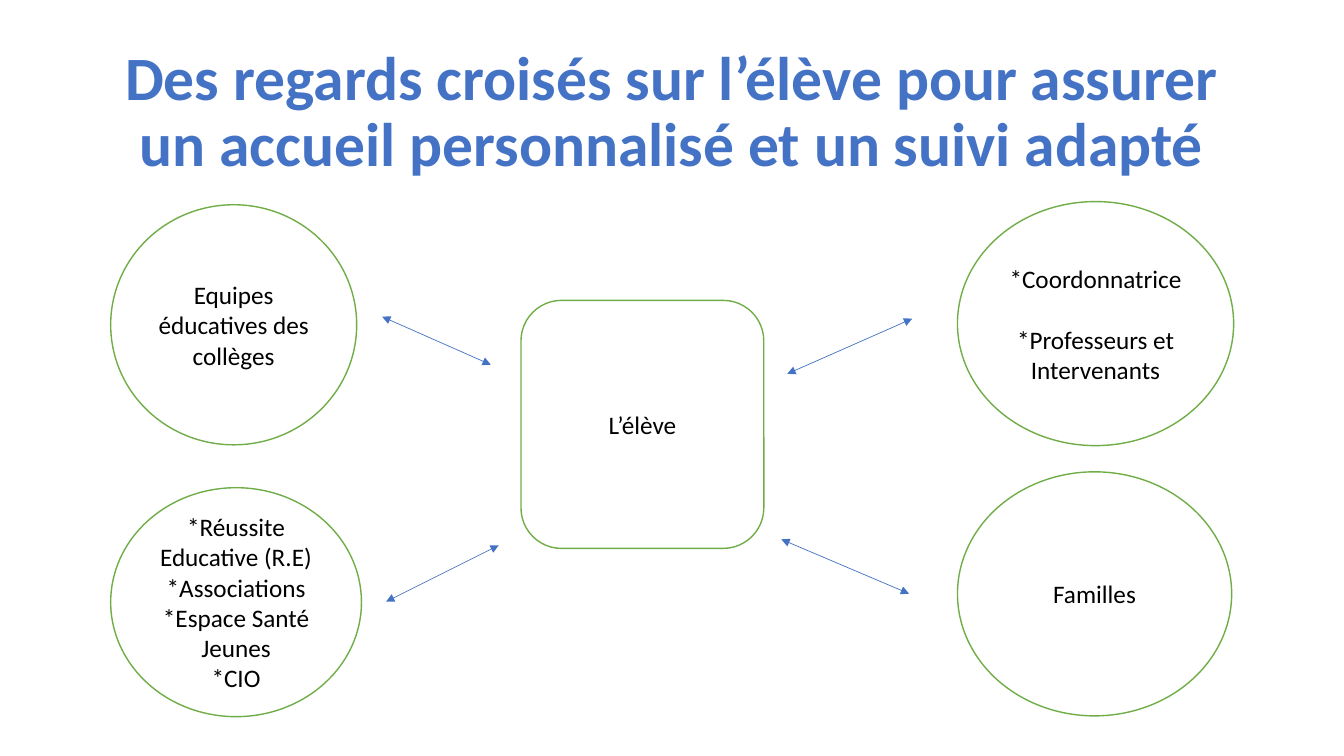
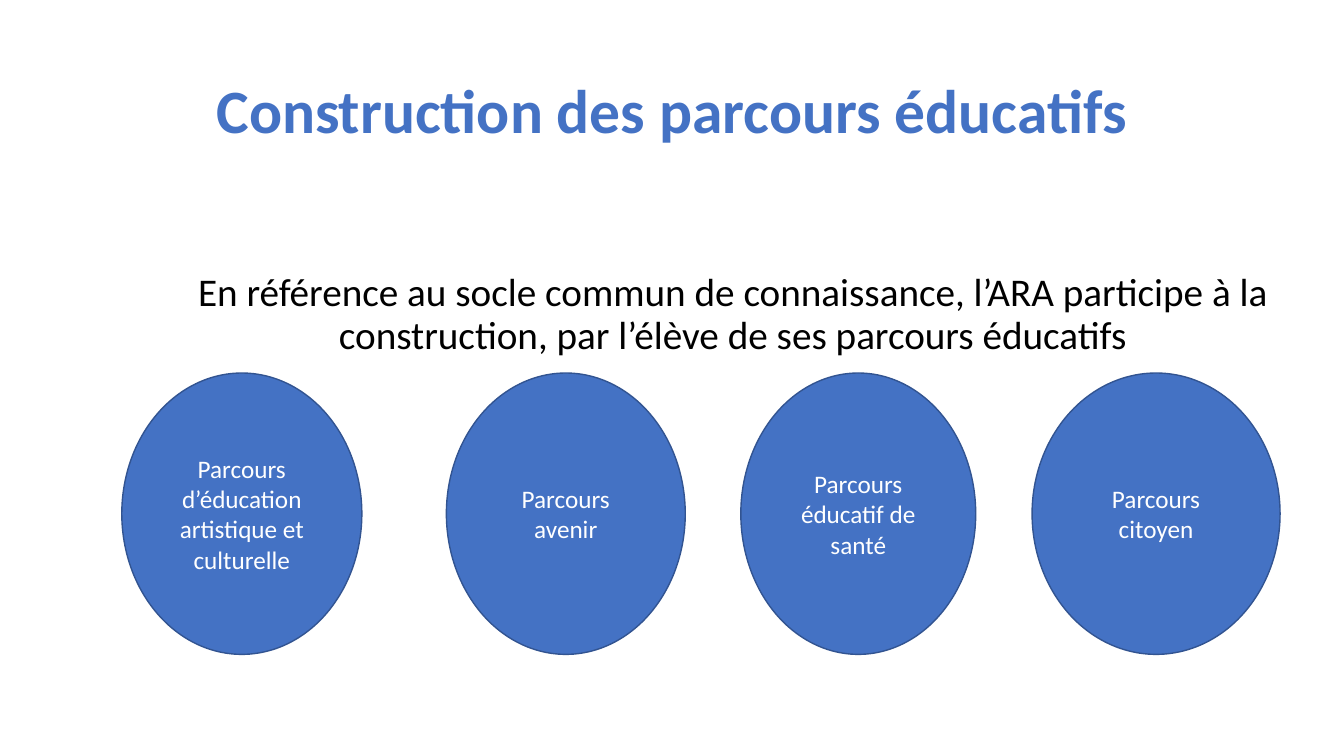
"""Build two slides on the shared view of the pupil and the educational pathways."""
from lxml import etree
from pptx import Presentation
from pptx.dml.color import RGBColor
from pptx.enum.shapes import MSO_CONNECTOR, MSO_SHAPE
from pptx.enum.text import MSO_ANCHOR, MSO_AUTO_SIZE, PP_ALIGN
from pptx.oxml.ns import qn
from pptx.util import Cm, Pt

ELLIPSE = MSO_SHAPE.OVAL
ROUNDED = MSO_SHAPE.ROUNDED_RECTANGLE
STRAIGHT = MSO_CONNECTOR.STRAIGHT
MIDDLE, TOP = MSO_ANCHOR.MIDDLE, MSO_ANCHOR.TOP
CENTER = PP_ALIGN.CENTER
NO_AUTOFIT = MSO_AUTO_SIZE.NONE

FONT = "Calibri"
COLORS = {
    "blue": "4472C4",
    "dark_blue": "325491",
    "green": "70AD47",
    "white": "FFFFFF",
    "black": "000000",
}
OUTLINED = {"fill": "white", "line": "green", "text": "black"}
FILLED = {"fill": "blue", "line": "dark_blue", "text": "white"}

CONTENT_LAYOUT, TITLE_LAYOUT = 1, 5
TITLE_BOX = (2.34, 1.02, 29.21, 3.68)
BODY_BOX = (3.86, 6.75, 29.21, 10.57)

VIEWS_TITLE = (
    "Des regards croisés sur l’élève pour assurer un accueil personnalisé "
    "et un suivi adapté"
)
VIEWS = [
    (ELLIPSE, (2.79, 5.16, 6.2, 6.05), ["Equipes éducatives des collèges"], 0),
    (
        ELLIPSE,
        (2.79, 12.29, 6.32, 5.77),
        ["*Réussite Educative (R.E)", "*Associations", "*Espace Santé Jeunes", "*CIO"],
        0,
    ),
    (ROUNDED, (13.13, 7.57, 6.12, 6.25), ["L’élève"], 0),
    (
        ELLIPSE,
        (24.13, 5.08, 6.96, 6.15),
        ["*Coordonnatrice", "*Professeurs et Intervenants"],
        22,
    ),
    (ELLIPSE, (24.13, 11.89, 6.91, 6.15), ["Familles"], 0),
]
ARROWS = [
    (9.63, 7.98, 12.37, 9.19),
    (19.84, 9.42, 22.99, 8.03),
    (19.69, 13.59, 22.91, 14.96),
    (9.73, 15.16, 12.57, 13.74),
]

PATHWAYS_TITLE = "Construction des parcours éducatifs"
PATHWAYS_INTRO = (
    "En référence au socle commun de connaissance, l’ARA participe à la "
    "construction, par l’élève de ses parcours éducatifs"
)
PATHWAY_TOP, PATHWAY_HEIGHT = 9.4, 7.09
PATHWAYS = [
    (3.07, 6.05, "Parcours d’éducation artistique et culturelle"),
    (11.25, 6.02, "Parcours avenir"),
    (18.67, 5.92, "Parcours éducatif de santé"),
    (26.01, 6.25, "Parcours citoyen"),
]


def color(name):
    """Return the palette colour of that name."""
    return RGBColor.from_string(COLORS[name])


def write(shape, lines, size, color_name, anchor=MIDDLE, bold=False, spacing=1.0, gap=0):
    """Write centred paragraphs, with a gap in points between them."""
    frame = shape.text_frame
    frame.text = "\n".join(lines)
    frame.word_wrap = True
    frame.auto_size = NO_AUTOFIT
    frame.vertical_anchor = anchor
    for index, paragraph in enumerate(frame.paragraphs):
        paragraph.alignment = CENTER
        paragraph.line_spacing = spacing
        paragraph.space_before = Pt(gap if index else 0)
        for run in paragraph.runs:
            run.font.name = FONT
            run.font.size = Pt(size)
            run.font.bold = bold
            run.font.color.rgb = color(color_name)


def place(shape, box):
    """Move and size a shape to a box in centimetres."""
    shape.left, shape.top, shape.width, shape.height = map(Cm, box)


def add_titled_slide(presentation, layout_index, title):
    """Add a slide with the shared title style."""
    slide = presentation.slides.add_slide(presentation.slide_layouts[layout_index])
    place(slide.shapes.title, TITLE_BOX)
    write(slide.shapes.title, [title], 44, "blue", bold=True, spacing=0.9)
    return slide


def add_bubble(slide, kind, box, lines, style, gap=0):
    """Add an outlined shape holding centred text."""
    shape = slide.shapes.add_shape(kind, *map(Cm, box))
    shape.shadow.inherit = False
    shape.fill.solid()
    shape.fill.fore_color.rgb = color(style["fill"])
    shape.line.color.rgb = color(style["line"])
    shape.line.width = Pt(1)
    write(shape, lines, 18, style["text"], gap=gap)


def add_double_arrow(slide, ends):
    """Add a thin line with an arrowhead at both ends."""
    connector = slide.shapes.add_connector(STRAIGHT, *map(Cm, ends))
    connector.line.color.rgb = color("blue")
    connector.line.width = Pt(0.5)
    line = connector.line._get_or_add_ln()
    for tag in ("a:headEnd", "a:tailEnd"):
        etree.SubElement(line, qn(tag), type="triangle")
    etree.SubElement(connector._element.spPr, qn("a:effectLst"))


def remove_bullet(paragraph):
    """Take the bullet and its indent off a paragraph."""
    properties = paragraph._p.get_or_add_pPr()
    properties.set("marL", "0")
    properties.set("indent", "0")
    etree.SubElement(properties, qn("a:buNone"))


def build_views(presentation):
    """Build the slide with the pupil at the centre."""
    slide = add_titled_slide(presentation, TITLE_LAYOUT, VIEWS_TITLE)
    for kind, box, lines, gap in VIEWS:
        add_bubble(slide, kind, box, lines, OUTLINED, gap)
    for ends in ARROWS:
        add_double_arrow(slide, ends)


def build_pathways(presentation):
    """Build the slide with the row of pathways."""
    slide = add_titled_slide(presentation, CONTENT_LAYOUT, PATHWAYS_TITLE)
    body = slide.placeholders[1]
    place(body, BODY_BOX)
    write(body, [PATHWAYS_INTRO], 28, "black", anchor=TOP, spacing=0.9)
    remove_bullet(body.text_frame.paragraphs[0])
    for left, width, label in PATHWAYS:
        box = (left, PATHWAY_TOP, width, PATHWAY_HEIGHT)
        add_bubble(slide, ELLIPSE, box, [label], FILLED)


def main():
    """Build and save the presentation."""
    presentation = Presentation()
    presentation.slide_width = Cm(33.87)
    presentation.slide_height = Cm(19.05)
    build_views(presentation)
    build_pathways(presentation)
    presentation.save("out.pptx")


if __name__ == "__main__":
    main()
